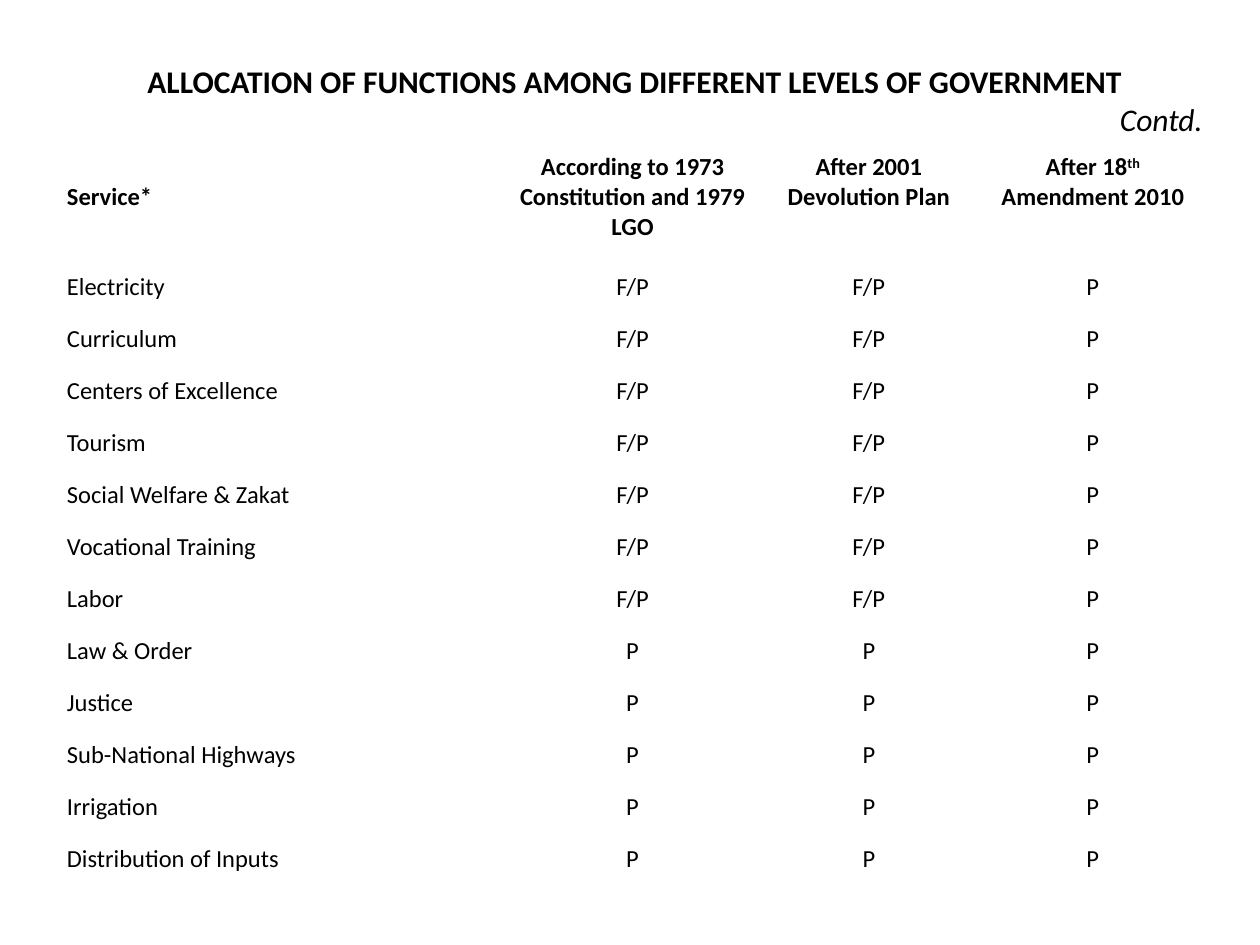
from pptx import Presentation
from pptx.dml.color import RGBColor
from pptx.enum import text as t
from pptx.util import Pt

BLACK = RGBColor(0, 0, 0)
AL = t.PP_ALIGN

TITLE = "ALLOCATION OF FUNCTIONS AMONG DIFFERENT LEVELS OF GOVERNMENT"
NOTE = "Contd."
HEADS = [
    ["Service*"],
    ["According to 1973 Constitution and 1979 LGO"],
    ["After 2001 Devolution Plan"],
    ["After 18", "th", " Amendment 2010"],
]
ROWS = [
    ("Electricity", "F/P", "F/P", "P"),
    ("Curriculum", "F/P", "F/P", "P"),
    ("Centers of Excellence", "F/P", "F/P", "P"),
    ("Tourism", "F/P", "F/P", "P"),
    ("Social Welfare & Zakat", "F/P", "F/P", "P"),
    ("Vocational Training", "F/P", "F/P", "P"),
    ("Labor", "F/P", "F/P", "P"),
    ("Law & Order", "P", "P", "P"),
    ("Justice", "P", "P", "P"),
    ("Sub-National Highways", "P", "P", "P"),
    ("Irrigation", "P", "P", "P"),
    ("Distribution of Inputs", "P", "P", "P"),
]

LEFT, TOP = 36, 36
WIDTHS = [253.5, 144, 126, 130]
HEIGHTS = [51, 60] + [29.75] * len(ROWS)
LINE = 17  # height of one 14 pt line
PAD = {"margin_left": Pt(2.25), "margin_right": Pt(2.25),
       "margin_top": 0, "margin_bottom": 0}
BASE = {"name": "Calibri", "size": Pt(14), "bold": False, "italic": False}
BOLD = {"bold": True}


def assign(obj, values):
    for key, value in values.items():
        setattr(obj, key, value)


def write(par, parts, align, form=None, space=None):
    """Fill a paragraph with runs; a part reading "th" is raised."""
    par.alignment = align
    if space:
        par.line_spacing = space
    for part in parts:
        run = par.add_run()
        run.text = part
        assign(run.font, {**BASE, **(form or {})})
        run.font.color.rgb = BLACK
        if part == "th":
            run.font._element.set("baseline", "30000")


def main():
    prs = Presentation()
    prs.slide_width, prs.slide_height = Pt(720), Pt(540)
    slide = prs.slides.add_slide(prs.slide_layouts[6])
    table = slide.shapes.add_table(
        len(HEIGHTS), len(WIDTHS), Pt(LEFT), Pt(TOP),
        Pt(sum(WIDTHS)), Pt(sum(HEIGHTS))).table
    assign(table, {"first_row": False, "horz_banding": False})
    for col, width in zip(table.columns, WIDTHS):
        col.width = Pt(width)
    for row, height in zip(table.rows, HEIGHTS):
        row.height = Pt(height)
    for cell in table.iter_cells():
        assign(cell, PAD)
        cell.fill.background()

    head = table.cell(0, 0)
    head.merge(table.cell(0, len(WIDTHS) - 1))
    frame = head.text_frame
    write(frame.paragraphs[0], [TITLE], AL.CENTER, {"size": Pt(18), "bold": True})
    write(frame.add_paragraph(), [NOTE], AL.RIGHT, {"size": Pt(18), "italic": True})

    for c, parts in enumerate(HEADS):
        par = table.cell(1, c).text_frame.paragraphs[0]
        write(par, parts, AL.CENTER if c else AL.LEFT, BOLD)
    table.cell(1, 0).margin_top = Pt(LINE)

    for r, row in enumerate(ROWS, 2):
        for c, word in enumerate(row):
            par = table.cell(r, c).text_frame.paragraphs[0]
            write(par, [word], AL.CENTER if c else AL.JUSTIFY, space=1.5)

    prs.save("out.pptx")


if __name__ == "__main__":
    main()
